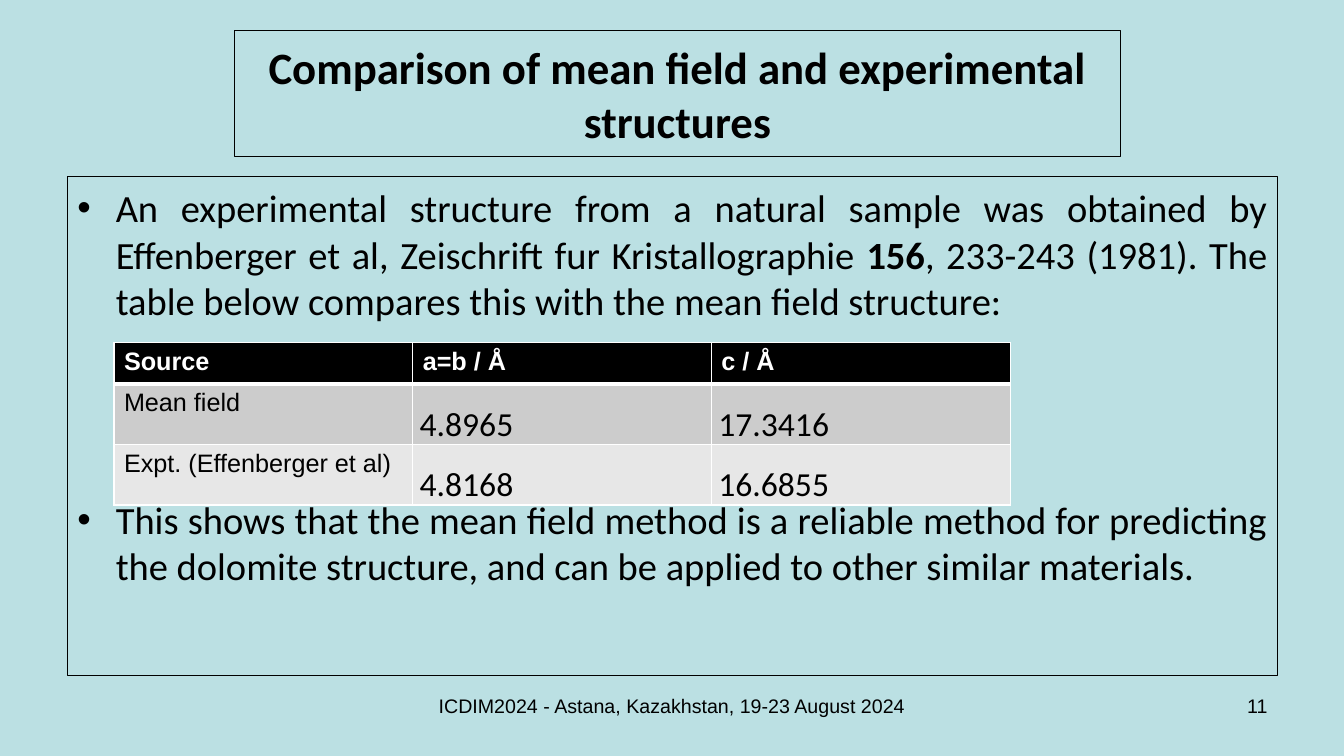
from lxml.etree import SubElement as Sub
from pptx import Presentation
from pptx.dml.color import RGBColor as Rgb
from pptx.enum.text import MSO_ANCHOR as Anchor, PP_ALIGN as Align
from pptx.oxml.ns import qn
from pptx.util import Inches as In, Pt

HUES = {"back": "BBE0E3", "ink": "000000", "white": "FFFFFF",
        "odd": "CCCCCC", "even": "E7E7E7"}


def hue(name):
    return Rgb.from_string(HUES[name])


def write(para, text, align=Align.LEFT, ink="ink", **form):
    """Add a run; form holds font values such as name, size and bold."""
    para.alignment = align
    run = para.add_run()
    run.text = text
    run.font.color.rgb = hue(ink)
    for key, value in form.items():
        setattr(run.font, key, value)
    return run


deck = Presentation()
deck.slide_width, deck.slide_height = In(13.33), In(7.5)
slide = deck.slides.add_slide(deck.slide_layouts[5])
slide.background.fill.solid()
slide.background.fill.fore_color.rgb = hue("back")

# Title and framed body
title = slide.shapes.title
title.left, title.top, title.width, title.height = In(2.33), In(0.3), In(8.78), In(1.25)
title.text_frame.vertical_anchor = Anchor.MIDDLE
write(title.text_frame.paragraphs[0],
      "Comparison of mean field and experimental structures",
      Align.CENTER, name="Calibri", size=Pt(32), bold=True)

body = slide.shapes.add_textbox(In(0.67), In(1.75), In(12), In(4.95))
body.text_frame.word_wrap = True
body.text_frame.margin_top = In(0.08)
for box in (title, body):
    box.line.color.rgb = hue("ink")
    box.line.width = Pt(0.75)

points = [
    [("An experimental structure from a natural sample was obtained by "
      "Effenberger et al, Zeischrift fur Kristallographie ", False),
     ("156", True),
     (", 233-243 (1981). The table below compares this with the mean field "
      "structure:", False)],
    [("This shows that the mean field method is a reliable method for "
      "predicting the dolomite structure, and can be applied to other similar "
      "materials.", False)],
]
for num, parts in enumerate(points):
    para = body.text_frame.paragraphs[0] if num == 0 else body.text_frame.add_paragraph()
    if num:
        para.space_before = Pt(123.5)  # room for the table
    props = para._p.get_or_add_pPr()
    props.set("marL", str(In(0.38)))
    props.set("indent", str(-In(0.38)))
    Sub(props, qn("a:buFont"), typeface="Arial")
    Sub(props, qn("a:buChar"), char="•")
    for text, bold in parts:
        write(para, text, Align.JUSTIFY, name="Calibri", size=Pt(27.5), bold=bold)

# Footer and slide number
for left, width, text, align in (
        (4, 5.33, "ICDIM2024 - Astana, Kazakhstan, 19-23 August 2024", Align.CENTER),
        (9.56, 3.11, "11", Align.RIGHT)):
    box = slide.shapes.add_textbox(In(left), In(6.83), In(width), In(0.52))
    box.text_frame.word_wrap = True
    write(box.text_frame.paragraphs[0], text, align, name="Arial", size=Pt(14))

# Table of cell lengths
rows = [("Source", "a=b / Å", "c / Å"),
        ("Mean field", "4.8965", "17.3416"),
        ("Expt. (Effenberger et al)", "4.8168", "16.6855")]
fills = ("ink", "odd", "even")
table = slide.shapes.add_table(3, 3, In(1.13), In(3.4), In(8.89), In(1.23)).table
for r, row in enumerate(rows):
    table.rows[r].height = In(0.41)
    for c, text in enumerate(row):
        cell = table.cell(r, c)
        para = cell.text_frame.paragraphs[0]
        if r and c:
            cell.margin_left = cell.margin_right = In(0.07)
            cell.margin_top = cell.margin_bottom = 0
            para.line_spacing, para.space_after = 1.5, Pt(8)
            write(para, text, Align.JUSTIFY, name="Calibri", size=Pt(24))
        else:
            write(para, text, ink="ink" if r else "white",
                  name="Arial", size=Pt(18), bold=r == 0)
        props = cell._tc.get_or_add_tcPr()
        for side in "LRTB":
            thick = (r == 0 and side == "B") or (r == 1 and side == "T")
            edge = Sub(props, qn("a:ln" + side), w=str(Pt(3 if thick else 1)))
            Sub(Sub(edge, qn("a:solidFill")), qn("a:srgbClr"), val=HUES["white"])
        cell.fill.solid()
        cell.fill.fore_color.rgb = hue(fills[r])

deck.save("out.pptx")
